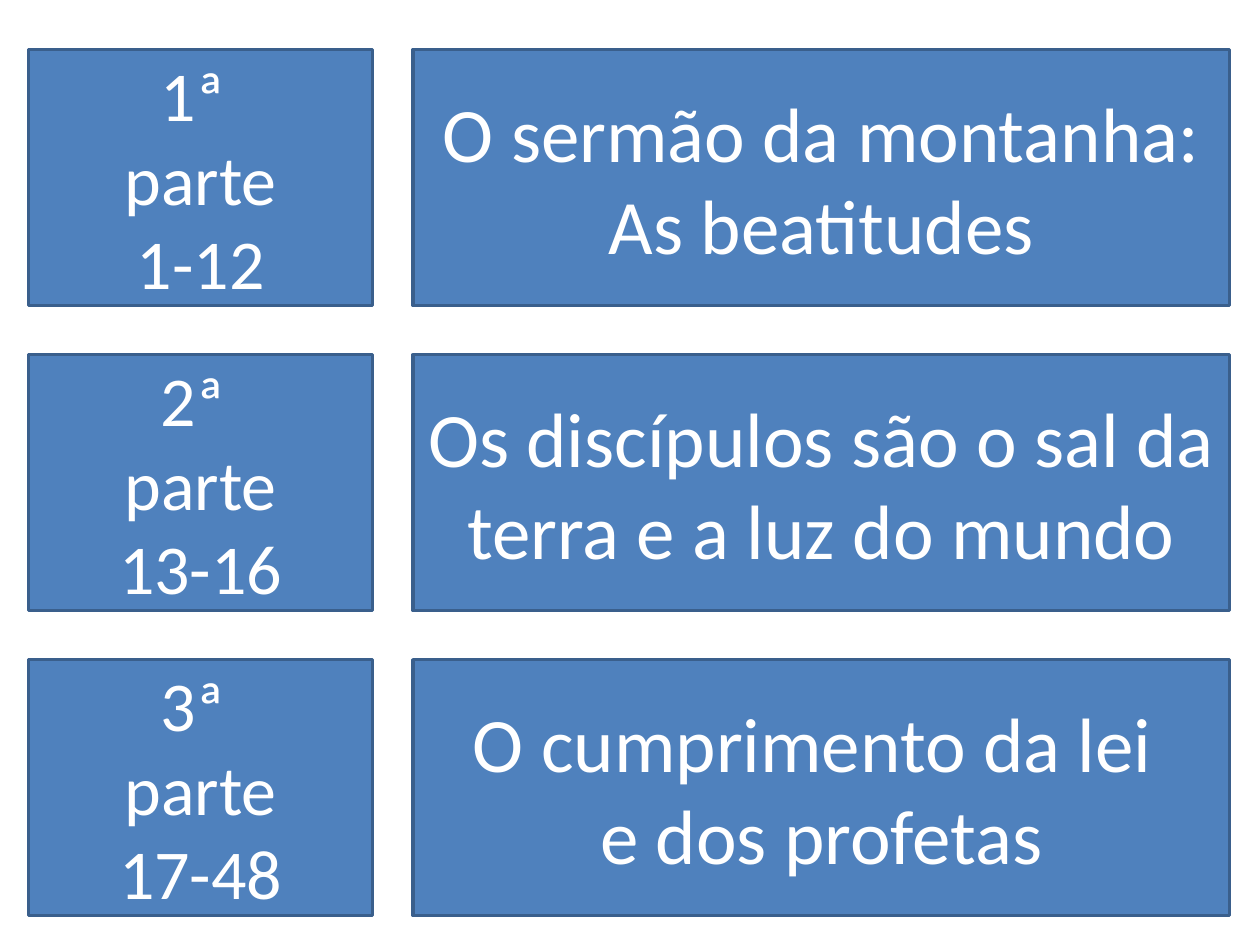
from pptx import Presentation
from pptx.dml.color import RGBColor
from pptx.enum.shapes import MSO_SHAPE as Shape
from pptx.enum.text import MSO_ANCHOR as Anchor, PP_ALIGN as Align
from pptx.util import Cm, Pt

LEFT, TOP = 0.58, 1.0
ROW_W, ROW_H, ROW_PITCH = 24.21, 5.16, 6.15
PART_W, GAP = 6.93, 0.82

PARTS = [
    (["1ª ", "parte", "1-12"], ["O sermão da montanha:", "As beatitudes"]),
    (["2ª ", "parte", "13-16"],
     ["Os discípulos são o sal da terra e a luz do mundo"]),
    (["3ª ", "parte", "17-48"], ["O cumprimento da lei ", "e dos profetas"]),
]


def color(value):
    return RGBColor.from_string(value)


def write(tf, lines, size, font="Calibri", fill="FFFFFF", align=Align.CENTER):
    tf.word_wrap = True
    tf.vertical_anchor = Anchor.MIDDLE
    for i, line in enumerate(lines):
        p = tf.add_paragraph() if i else tf.paragraphs[0]
        p.alignment = align
        r = p.add_run()
        r.text = line
        r.font.name = font
        r.font.size = Pt(size)
        r.font.color.rgb = color(fill)


def add_box(s, x, y, w, h, lines, size):
    sp = s.shapes.add_shape(Shape.RECTANGLE, Cm(x), Cm(y), Cm(w), Cm(h))
    sp.shadow.inherit = False
    sp.fill.solid()
    sp.fill.fore_color.rgb = color("4F81BD")
    sp.line.color.rgb = color("3A5F8C")
    sp.line.width = Pt(2)
    write(sp.text_frame, lines, size)


def add_part_row(s, x, y, w, h, part, theme):
    """Place the part's verses on the left and its theme on the right."""
    add_box(s, x, y, PART_W, h, part, 40)
    offset = PART_W + GAP
    add_box(s, x + offset, y, w - offset, h, theme, 44)


def main():
    prs = Presentation()
    prs.slide_width, prs.slide_height = Cm(25.4), Cm(19.05)
    s = prs.slides.add_slide(prs.slide_layouts[6])
    for i, (part, theme) in enumerate(PARTS):
        add_part_row(s, LEFT, TOP + i * ROW_PITCH, ROW_W, ROW_H, part, theme)
    prs.save("out.pptx")


if __name__ == "__main__":
    main()
